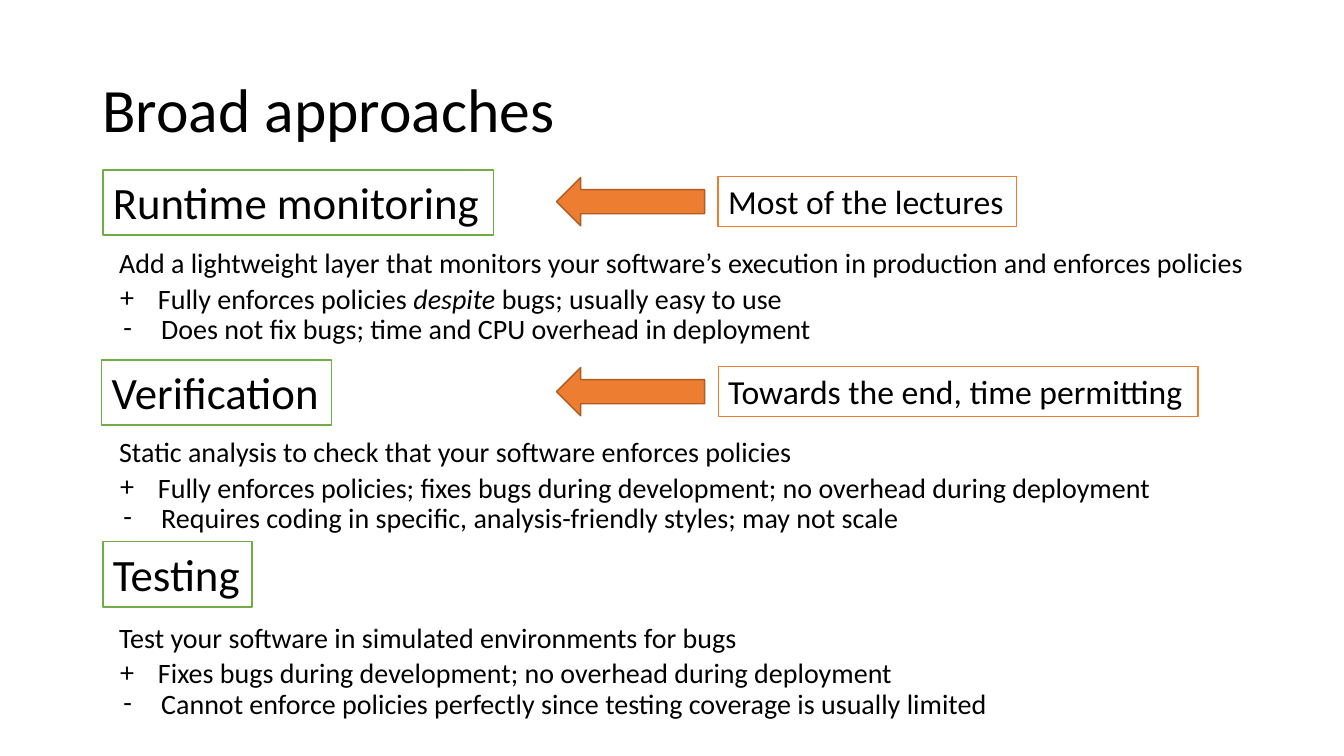
from lxml.etree import SubElement
from pptx import Presentation
from pptx.dml.color import RGBColor
from pptx.enum.shapes import MSO_SHAPE
from pptx.enum.text import MSO_ANCHOR, MSO_AUTO_SIZE, PP_ALIGN
from pptx.oxml.ns import qn
from pptx.util import Pt

PX = 9525
BLACK = RGBColor(0x00, 0x00, 0x00)
WHITE = RGBColor(0xFF, 0xFF, 0xFF)
GREEN = RGBColor(0x70, 0xAD, 0x47)
ORANGE = RGBColor(0xED, 0x7D, 0x31)
RUST = RGBColor(0xAF, 0x5C, 0x24)
INDENT = 36
ROW_HEIGHT = 42
ROWS = [(0, 0, 1096, None), (1, 34, 1088, "+"), (4, 63, 1092, "-")]

SECTIONS = [
    dict(
        heading="Runtime monitoring", box=(98, 162, 372, 62), body=(104, 229),
        note="Most of the lectures", note_width=284,
        lines=[
            "Add a lightweight layer that monitors your software’s execution in production and enforces policies",
            "Fully enforces policies *despite* bugs; usually easy to use",
            "Does not fix bugs; time and CPU overhead in deployment",
        ],
    ),
    dict(
        heading="Verification", box=(97, 343, 219, 62), body=(104, 409),
        note="Towards the end, time permitting", note_width=457,
        lines=[
            "Static analysis to check that your software enforces policies",
            "Fully enforces policies; fixes bugs during development; no overhead during deployment",
            "Requires coding in specific, analysis-friendly styles; may not scale",
        ],
    ),
    dict(
        heading="Testing", box=(98, 516, 142, 62), body=(104, 586),
        lines=[
            "Test your software in simulated environments for bugs",
            "Fixes bugs during development; no overhead during deployment",
            "Cannot enforce policies perfectly since testing coverage is usually limited",
        ],
    ),
]


def emu(*lengths):
    """Turn px lengths into EMU."""
    return [n * PX for n in lengths]


def set_attrs(target, **values):
    """Set each named attribute on the target."""
    for name, value in values.items():
        setattr(target, name, value)


def write(tf, text, size, wrap=True, anchor=MSO_ANCHOR.TOP, fit=MSO_AUTO_SIZE.SHAPE_TO_FIT_TEXT):
    """Write one left-aligned paragraph, with starred words in italics."""
    set_attrs(tf, word_wrap=wrap, vertical_anchor=anchor, auto_size=fit)
    p = tf.paragraphs[0]
    p.alignment = PP_ALIGN.LEFT
    for i, part in enumerate(text.split("*")):
        r = p.add_run()
        r.text = part
        set_attrs(r.font, name="Calibri", size=Pt(size), italic=i % 2 == 1)
        r.font.color.rgb = BLACK
    return p


def add_bullet(p, char):
    """Give the paragraph a hanging bullet character."""
    pPr = p._p.get_or_add_pPr()
    margin, = emu(INDENT)
    pPr.set("marL", str(margin))
    pPr.set("indent", str(-margin))
    SubElement(pPr, qn("a:buFont"), typeface="Calibri")
    SubElement(pPr, qn("a:buChar"), char=char)


def add_block(s, kind, box, fill, line):
    """Add a flat preset shape with a thin outline."""
    sp = s.shapes.add_shape(kind, *emu(*box))
    sp.shadow.inherit = False
    sp.fill.solid()
    sp.fill.fore_color.rgb = fill
    sp.line.color.rgb = line
    sp.line.width = Pt(1)
    return sp


def add_label(s, box, text, size, line):
    """Add an outlined white label."""
    sp = add_block(s, MSO_SHAPE.RECTANGLE, box, WHITE, line)
    write(sp.text_frame, text, size, wrap=False)


def add_title(s, box, text):
    """Place and fill the title placeholder."""
    sp = s.shapes.title
    set_attrs(sp, **dict(zip(("left", "top", "width", "height"), emu(*box))))
    p = write(sp.text_frame, text, 44, anchor=MSO_ANCHOR.MIDDLE, fit=MSO_AUTO_SIZE.NONE)
    p.line_spacing = 0.9


def add_body(s, left, top, lines):
    """Add the description with its plus and minus rows."""
    for (dx, dy, width, bullet), text in zip(ROWS, lines):
        sp = s.shapes.add_textbox(*emu(left + dx, top + dy, width, ROW_HEIGHT))
        p = write(sp.text_frame, text, 20)
        if bullet:
            add_bullet(p, bullet)


def add_note(s, left, top, width, text):
    """Add a left-pointing arrow and the note behind it."""
    arrow = add_block(s, MSO_SHAPE.RIGHT_ARROW, (left, top + 1, 141, 46), ORANGE, RUST)
    arrow.rotation = 180
    add_label(s, (left + 154, top, width, 48), text, 24, ORANGE)


def add_section(s, heading, box, body, lines, note=None, note_width=0):
    """Add one approach: heading, rows and optional note."""
    add_label(s, box, heading, 32, GREEN)
    add_body(s, *body, lines)
    if note:
        add_note(s, 530, box[1] + 6, note_width, note)


def main():
    """Build the slide and save it."""
    prs = Presentation()
    prs.slide_width, prs.slide_height = emu(1280, 720)
    s = prs.slides.add_slide(prs.slide_layouts[5])
    add_title(s, (88, 38, 1104, 139), "Broad approaches")
    for section in SECTIONS:
        add_section(s, **section)
    prs.save("out.pptx")


if __name__ == "__main__":
    main()
